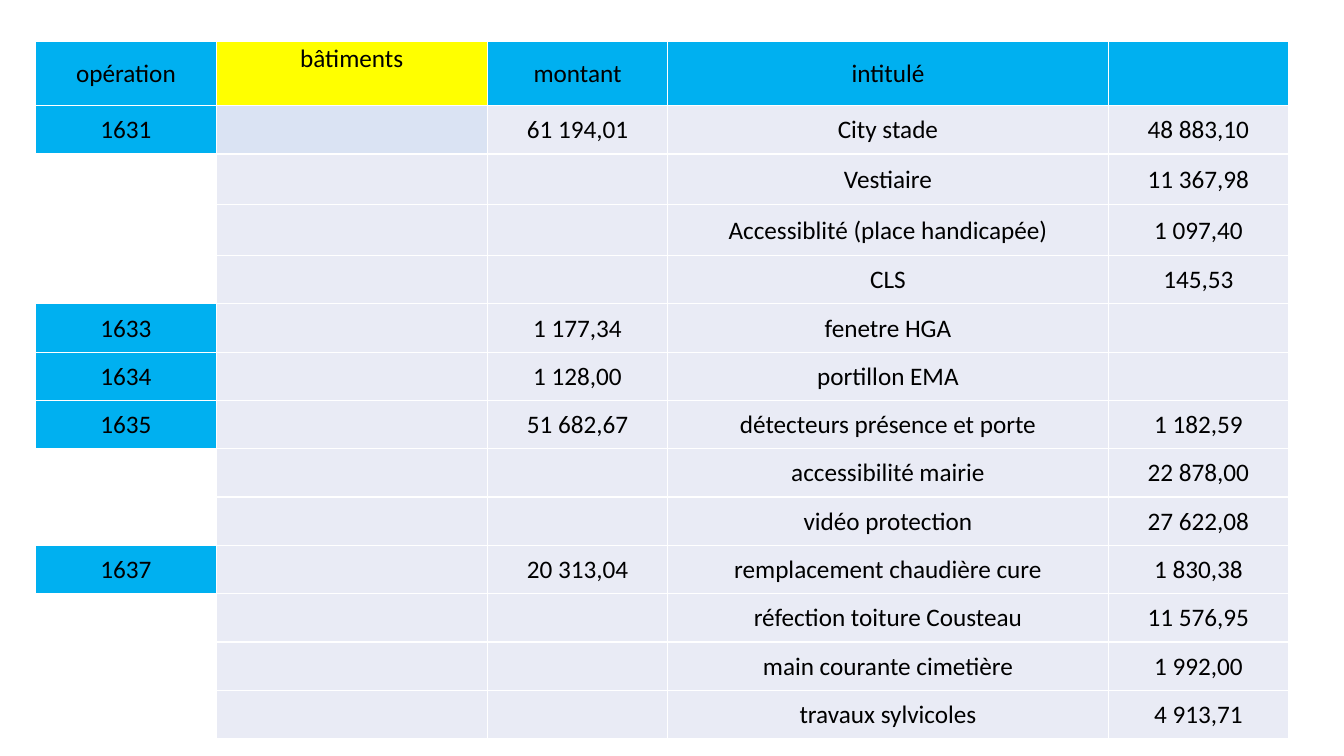
from dataclasses import dataclass

from lxml.etree import SubElement
from pptx import Presentation
from pptx.dml.color import RGBColor
from pptx.enum.text import MSO_ANCHOR, PP_ALIGN
from pptx.oxml.ns import qn
from pptx.table import _Cell
from pptx.util import Pt

BLUE = "00B0F0"
YELLOW = "FFFF00"
PALE_BLUE = "DAE3F3"
GREY = "E9EBF5"
WHITE = "FFFFFF"
BLACK = "000000"

COLUMN_WIDTHS = [128.9, 193.7, 128.9, 314.6, 128.9]
HEADER_HEIGHT = 46
ROW_HEIGHT = 34.5
TALL_ROW_HEIGHT = 36.3
CELL_MARGIN = 0.6
RAISED_MARGIN = 22
HEADERS = ["opération", "bâtiments", "montant", "intitulé", ""]


@dataclass
class BudgetLine:
    title: str
    detail: str = ""
    operation: str = ""
    amount: str = ""
    height: float = ROW_HEIGHT
    building_fill: str = GREY


BUDGET_LINES = [
    BudgetLine("City stade", "48 883,10", "1631", "61 194,01", building_fill=PALE_BLUE),
    BudgetLine("Vestiaire", "11 367,98", height=TALL_ROW_HEIGHT),
    BudgetLine("Accessiblité (place handicapée)", "1 097,40", height=TALL_ROW_HEIGHT),
    BudgetLine("CLS", "145,53"),
    BudgetLine("fenetre HGA", "", "1633", "1 177,34"),
    BudgetLine("portillon EMA", "", "1634", "1 128,00"),
    BudgetLine("détecteurs présence et porte", "1 182,59", "1635", "51 682,67"),
    BudgetLine("accessibilité mairie", "22 878,00"),
    BudgetLine("vidéo protection", "27 622,08"),
    BudgetLine("remplacement chaudière cure", "1 830,38", "1637", "20 313,04"),
    BudgetLine("réfection toiture Cousteau", "11 576,95"),
    BudgetLine("main courante cimetière", "1 992,00"),
    BudgetLine("travaux sylvicoles", "4 913,71"),
]


def color(value: str) -> RGBColor:
    return RGBColor.from_string(value)


def add_borders(cell: _Cell) -> None:
    properties = cell._tc.get_or_add_tcPr()
    for side in ("a:lnL", "a:lnR", "a:lnT", "a:lnB"):
        line = SubElement(properties, qn(side), w=str(Pt(1)))
        fill = SubElement(line, qn("a:solidFill"))
        SubElement(fill, qn("a:srgbClr"), val=WHITE)


def draw_cell(cell: _Cell, text: str, fill: str) -> None:
    add_borders(cell)
    if fill:
        cell.fill.solid()
        cell.fill.fore_color.rgb = color(fill)
    else:
        cell.fill.background()
    cell.margin_left = cell.margin_right = cell.margin_top = Pt(CELL_MARGIN)
    cell.margin_bottom = Pt(0)
    cell.vertical_anchor = MSO_ANCHOR.MIDDLE
    if not text:
        return
    cell.text_frame.text = text
    paragraph = cell.text_frame.paragraphs[0]
    paragraph.alignment = PP_ALIGN.CENTER
    font = paragraph.runs[0].font
    font.name = "Calibri"
    font.size = Pt(18)
    font.bold = False
    font.color.rgb = color(BLACK)


def main() -> None:
    presentation = Presentation()
    presentation.slide_width = Pt(960)
    presentation.slide_height = Pt(540)
    slide = presentation.slides.add_slide(presentation.slide_layouts[6])

    heights = [HEADER_HEIGHT] + [line.height for line in BUDGET_LINES]
    shape = slide.shapes.add_table(
        len(heights), len(COLUMN_WIDTHS), Pt(25.5), Pt(29.5),
        Pt(sum(COLUMN_WIDTHS)), Pt(sum(heights)),
    )
    table = shape.table
    table.first_row = False
    table.horz_banding = False
    for column, width in zip(table.columns, COLUMN_WIDTHS):
        column.width = Pt(width)
    for row, height in zip(table.rows, heights):
        row.height = Pt(height)

    for index, header in enumerate(HEADERS):
        draw_cell(table.cell(0, index), header, YELLOW if header == "bâtiments" else BLUE)
    table.cell(0, 1).margin_bottom = Pt(RAISED_MARGIN)

    for row_index, line in enumerate(BUDGET_LINES, start=1):
        texts = [line.operation, "", line.amount, line.title, line.detail]
        fills = [BLUE if line.operation else "", line.building_fill, GREY, GREY, GREY]
        for column_index, (text, fill) in enumerate(zip(texts, fills)):
            draw_cell(table.cell(row_index, column_index), text, fill)

    presentation.save("out.pptx")


if __name__ == "__main__":
    main()
